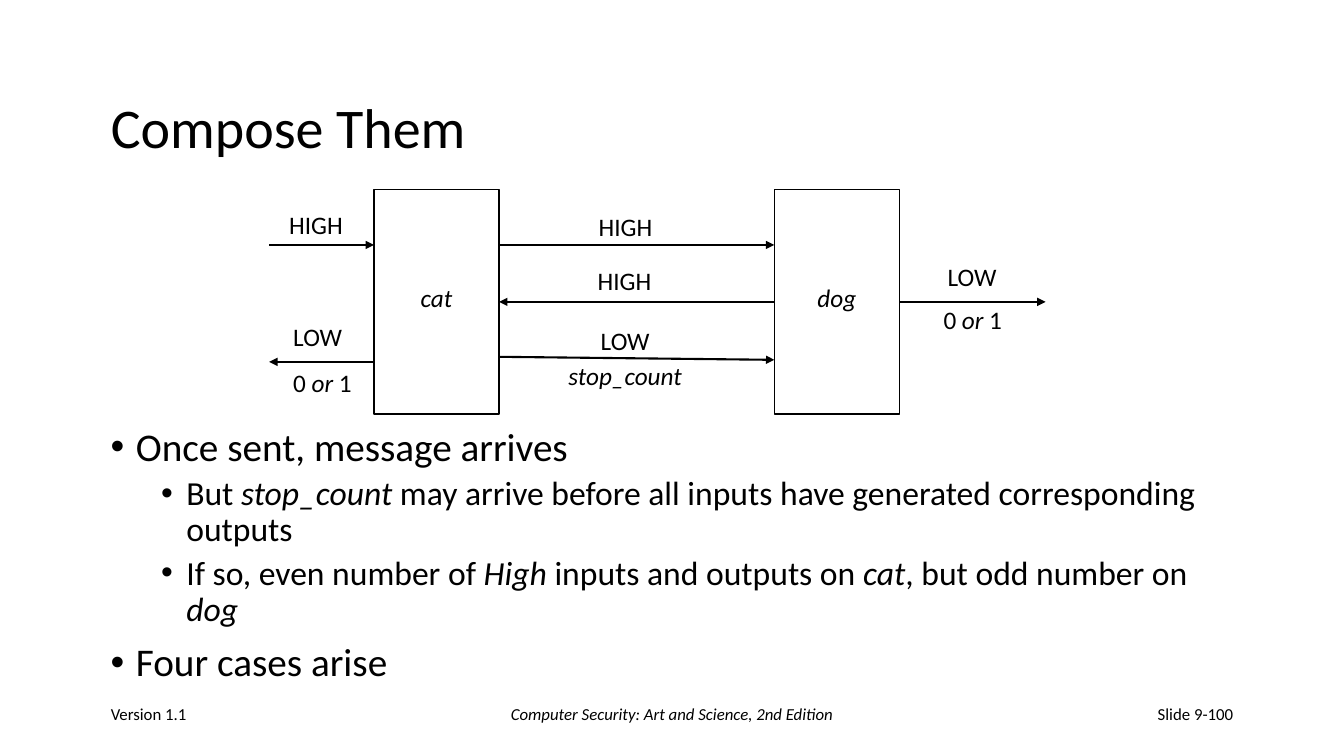
from dataclasses import dataclass
from lxml import etree
from pptx import Presentation
from pptx.dml.color import RGBColor
from pptx.enum.shapes import MSO_CONNECTOR, MSO_SHAPE
from pptx.enum.text import MSO_ANCHOR, PP_ALIGN
from pptx.oxml.ns import qn
from pptx.util import Inches, Pt

RECT, LINE = MSO_SHAPE.RECTANGLE, MSO_CONNECTOR.STRAIGHT
TOP, MID = MSO_ANCHOR.TOP, MSO_ANCHOR.MIDDLE
LEFT, MIDST, RIGHT = PP_ALIGN.LEFT, PP_ALIGN.CENTER, PP_ALIGN.RIGHT
LSIDE, RSIDE = 1, 3  # connection sites


@dataclass(frozen=True)
class Theme:
    font: str = "Calibri"
    ink: RGBColor = RGBColor(0, 0, 0)
    title: int = 40
    body: tuple = (28, 24)
    label: int = 18
    foot: int = 12
    edge: float = 1
    arrow: float = 1.5


THEME = Theme()


def cells(*nums):
    """Turn grid cells of a tenth of an inch into lengths."""
    return [Inches(n / 10) for n in nums]


def write(para, text, size):
    """Add runs; parts between asterisks are italic."""
    for i, part in enumerate(text.split("*")):
        if part:
            run = para.add_run()
            run.text = part
            font = run.font
            font.name, font.size = THEME.font, Pt(size)
            font.italic = i % 2 == 1
            font.color.rgb = THEME.ink


def add_text(slide, box, text, size, align=LEFT, anchor=TOP, wrap=True):
    frame = slide.shapes.add_textbox(*cells(*box)).text_frame
    frame.word_wrap, frame.vertical_anchor = wrap, anchor
    frame.paragraphs[0].alignment = align
    write(frame.paragraphs[0], text, size)


def add_title(slide, box, text):
    title = slide.shapes.title
    title.left, title.top, title.width, title.height = cells(*box)
    frame = title.text_frame
    frame.vertical_anchor = MID
    para = frame.paragraphs[0]
    para.alignment, para.line_spacing = LEFT, 0.9
    write(para, text, THEME.title)


def add_list(slide, box, items):
    frame = slide.shapes.add_textbox(*cells(*box)).text_frame
    frame.word_wrap = True
    for i, (level, text) in enumerate(items):
        para = frame.paragraphs[0] if i == 0 else frame.add_paragraph()
        props = para._p.get_or_add_pPr()
        props.set("marL", str(Inches(0.25 + 0.5 * level)))
        props.set("indent", str(Inches(-0.25)))
        etree.SubElement(props, qn("a:buFont")).set("typeface", "Arial")
        etree.SubElement(props, qn("a:buChar")).set("char", "•")
        para.level, para.line_spacing = level, 0.9
        para.space_before = Pt((10, 5)[level] if i else 0)
        write(para, text, THEME.body[level])


def add_node(slide, box, name):
    node = slide.shapes.add_shape(RECT, *cells(*box))
    node.shadow.inherit = False
    node.fill.background()
    node.line.color.rgb, node.line.width = THEME.ink, Pt(THEME.edge)
    frame = node.text_frame
    frame.vertical_anchor, frame.margin_bottom = MID, Inches(0.14)
    frame.paragraphs[0].alignment = MIDST
    write(frame.paragraphs[0], name, THEME.label)
    return node


def add_arrow(slide, start, end):
    link = slide.shapes.add_connector(LINE, *cells(*start, *end))
    link.line.color.rgb, link.line.width = THEME.ink, Pt(THEME.arrow)
    tip = etree.SubElement(link.line._get_or_add_ln(), qn("a:tailEnd"))
    tip.set("type", "triangle")
    etree.SubElement(link._element.spPr, qn("a:effectLst"))
    return link


def add_flow(slide, box):
    """Two machines, their messages and the labels of these."""
    left, top, width, height = box
    node_w, mid = 12.4, height / 2
    cat_l, dog_l = 10.4, 50.1
    cat_r, dog_r = cat_l + node_w, dog_l + node_w

    # Machines
    cat = add_node(slide, (left + cat_l, top, node_w, height), "*cat*")
    dog = add_node(slide, (left + dog_l, top, node_w, height), "*dog*")

    # Messages
    def arrow(x1, y1, x2, y2):
        return add_arrow(slide, (left + x1, top + y1), (left + x2, top + y2))

    arrow(0, 5.5, cat_l, 5.5)
    arrow(cat_l, 17.1, 0, 17.1)
    arrow(cat_r, 5.5, dog_l, 5.5)
    arrow(cat_r, 16.6, dog_l, 16.9)
    back = arrow(dog_l, mid, cat_r, mid)
    back.begin_connect(dog, LSIDE)
    back.end_connect(cat, RSIDE)
    arrow(dog_r, mid, width, mid).begin_connect(dog, RSIDE)

    # Labels: column, row, width, text
    for x, y, w, text in (
        (1, 1.5, 7.4, "HIGH"),
        (1.4, 12.6, 6.9, "LOW"),
        (1.4, 17.1, 8.7, "0 *or* 1"),
        (31.7, 1.7, 7.4, "HIGH"),
        (31.6, 7, 7.4, "HIGH"),
        (31.9, 13, 6.9, "LOW"),
        (28.7, 16.5, 14, "*stop_count*"),
        (66.3, 6.6, 6.9, "LOW"),
        (65.9, 10.9, 8.7, "0 *or* 1"),
    ):
        add_text(slide, (left + x, top + y, w, 4), text, THEME.label,
                 wrap=False)


def add_foot(slide, box):
    left, top, width, height = box
    side, centre = 27.8, 42.2
    for x, w, align, text in (
        (0, side, LEFT, "Version 1.1"),
        ((width - centre) / 2, centre, MIDST,
         "*Computer Security: Art and Science, 2nd Edition*"),
        (width - side, side, RIGHT, "Slide 9-100"),
    ):
        add_text(slide, (left + x, top, w, height), text, THEME.foot,
                 align, MID)


def main():
    deck = Presentation()
    deck.slide_width, deck.slide_height = Inches(13.33), Inches(7.5)
    slide = deck.slides.add_slide(deck.slide_layouts[5])
    edge, span = 10, 113.3
    add_title(slide, (edge, 6.7, span, 12.5), "Compose Them")
    add_list(slide, (edge, 41.9, span, 21.7), (
        (0, "Once sent, message arrives"),
        (1, "But *stop_count* may arrive before all inputs have generated "
            "corresponding outputs"),
        (1, "If so, even number of *High* inputs and outputs on *cat*, "
            "but odd number on *dog*"),
        (0, "Four cases arise"),
    ))
    add_foot(slide, (edge, 68.3, span, 5))
    add_flow(slide, (26.7, 18.8, 77, 22.3))
    deck.save("out.pptx")


if __name__ == "__main__":
    main()
